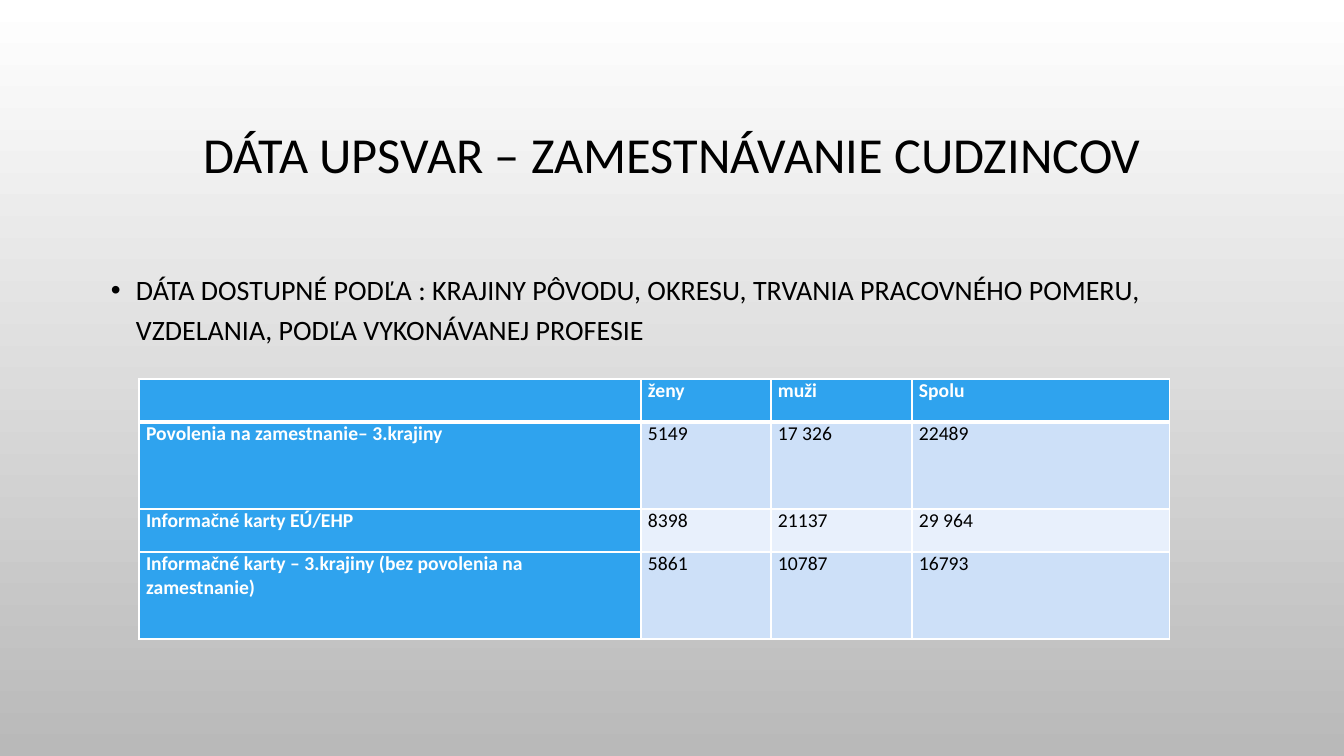
import pptx
import pptx.dml.color
import pptx.enum.text
import pptx.oxml
import pptx.oxml.ns
import pptx.util

PX = 914400 / 100.8
COLORS = {
    "text": "000000",
    "light": "FFFFFF",
    "bg_bottom": "B9B9B9",
    "header": "2FA3EE",
    "band_dark": "CDE0F8",
    "band_light": "E8F0FC",
}
COLUMN_WIDTHS = [502, 130, 141, 258]
ROW_HEIGHTS = [43, 87, 43, 87]
PERMITS = [
    ["", "ženy", "muži", "Spolu"],
    ["Povolenia na zamestnanie– 3.krajiny", "5149", "17 326", "22489"],
    ["Informačné karty EÚ/EHP", "8398", "21137", "29 964"],
    ["Informačné karty – 3.krajiny (bez povolenia na zamestnanie)",
     "5861", "10787", "16793"],
]


def px(length):
    return pptx.util.Emu(round(length * PX))


def rgb(name):
    return pptx.dml.color.RGBColor.from_string(COLORS[name])


class SlideBuilder:
    font = "Calibri"

    def __init__(self, presentation):
        self.slide = presentation.slides.add_slide(presentation.slide_layouts[6])

    def background(self, top, bottom):
        fill = self.slide.background.fill
        fill.gradient()
        fill.gradient_angle = 270
        for stop, name in zip(fill.gradient_stops, (top, bottom)):
            stop.color.rgb = rgb(name)

    def run(self, paragraph, text, size, color="text", bold=False):
        run = paragraph.add_run()
        run.text = text
        run.font.name = self.font
        run.font.size = pptx.util.Pt(size)
        run.font.bold = bold
        run.font.color.rgb = rgb(color)

    def text(self, box, text, size, spacing, anchor="TOP", align="LEFT", bullet=False):
        frame = self.slide.shapes.add_textbox(*map(px, box)).text_frame
        frame.word_wrap = True
        frame.vertical_anchor = pptx.enum.text.MSO_ANCHOR[anchor]
        paragraph = frame.paragraphs[0]
        paragraph.alignment = pptx.enum.text.PP_ALIGN[align]
        paragraph.line_spacing = spacing
        if bullet:
            self.bullet(paragraph)
        self.run(paragraph, text, size)

    def bullet(self, paragraph):
        properties = paragraph._p.get_or_add_pPr()
        properties.set("marL", str(px(25)))
        properties.set("indent", str(px(-25)))
        for tag in (f'buClr {pptx.oxml.ns.nsdecls("a")}><a:srgbClr val="{COLORS["text"]}"/></a:buClr>',
                    f'buFont {pptx.oxml.ns.nsdecls("a")} typeface="Arial"/>',
                    f'buChar {pptx.oxml.ns.nsdecls("a")} char="•"/>'):
            properties.append(pptx.oxml.parse_xml(f"<a:{tag}"))

    def borders(self, cell, **widths):
        """Draw white cell edges; widths in points by side L, R, T, B."""
        properties = cell._tc.get_or_add_tcPr()
        for side in "LRTB":
            properties.append(pptx.oxml.parse_xml(
                f'<a:ln{side} {pptx.oxml.ns.nsdecls("a")} w="{pptx.util.Pt(widths.get(side, 1))}">'
                f'<a:solidFill><a:srgbClr val="{COLORS["light"]}"/></a:solidFill></a:ln{side}>'))

    def table(self, left, top, widths, heights, rows, size):
        """Add a table with a header row, a header column and banded values."""
        table = self.slide.shapes.add_table(
            len(rows), len(widths), px(left), px(top),
            px(sum(widths)), px(sum(heights))).table
        table.first_col = True
        for column, width in zip(table.columns, widths):
            column.width = px(width)
        for r, (row, height) in enumerate(zip(rows, heights)):
            table.rows[r].height = px(height)
            edges = {0: {"B": 3}, 1: {"T": 3}}.get(r, {})
            band = "band_dark" if r % 2 else "band_light"
            for c, value in enumerate(row):
                heading = r == 0 or c == 0
                cell = table.cell(r, c)
                cell.margin_left = cell.margin_right = px(7)
                cell.margin_top = cell.margin_bottom = 0
                self.borders(cell, **edges)
                cell.fill.solid()
                cell.fill.fore_color.rgb = rgb("header" if heading else band)
                if value:
                    self.run(cell.text_frame.paragraphs[0], value, size,
                             "light" if heading else "text", heading)


def main():
    presentation = pptx.Presentation()
    presentation.slide_width = px(1344)
    presentation.slide_height = px(756)
    builder = SlideBuilder(presentation)
    builder.background("light", "bg_bottom")
    builder.text((101, 69, 1142, 176), "DÁTA UPSVAR – ZAMESTNÁVANIE CUDZINCOV",
                 36, 0.9, anchor="MIDDLE", align="CENTER")
    builder.text((101, 261, 1142, 377),
                 "DÁTA DOSTUPNÉ PODĽA : KRAJINY PÔVODU, OKRESU, TRVANIA PRACOVNÉHO POMERU, "
                 "VZDELANIA, PODĽA VYKONÁVANEJ PROFESIE", 20, 1.2, bullet=True)
    builder.table(139, 379, COLUMN_WIDTHS, ROW_HEIGHTS, PERMITS, 14)
    presentation.save("out.pptx")


if __name__ == "__main__":
    main()
